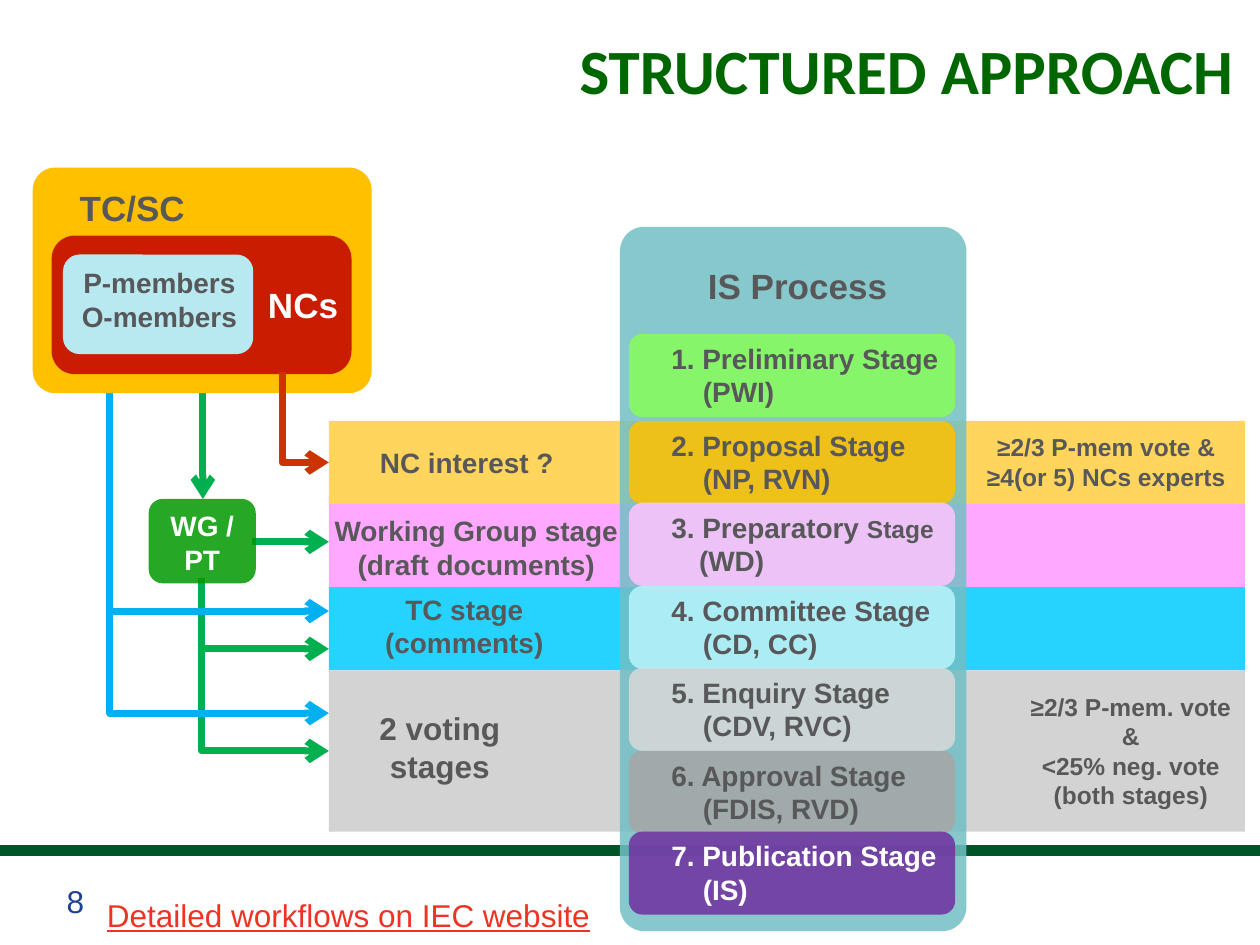
from lxml import etree
from pptx import Presentation
from pptx.dml.color import RGBColor
from pptx.enum.shapes import MSO_CONNECTOR, MSO_SHAPE
from pptx.enum.text import MSO_ANCHOR, PP_ALIGN
from pptx.oxml.ns import qn
from pptx.util import Inches, Pt

RECT, ROUND = MSO_SHAPE.RECTANGLE, MSO_SHAPE.ROUNDED_RECTANGLE
STRAIGHT, ELBOW = MSO_CONNECTOR.STRAIGHT, MSO_CONNECTOR.ELBOW
LEFT, CENTER, RIGHT = PP_ALIGN.LEFT, PP_ALIGN.CENTER, PP_ALIGN.RIGHT
TOP = MSO_ANCHOR.TOP

GREY = RGBColor(0x58, 0x58, 0x5A)
WHITE = RGBColor(0xFF, 0xFF, 0xFF)
NAVY = RGBColor(0x1E, 0x41, 0x91)
RED = RGBColor(0xEE, 0x33, 0x24)
RUST = RGBColor(0xCC, 0x33, 0x00)
BRICK = RGBColor(0xC0, 0x00, 0x00)
DARK = RGBColor(0x00, 0x55, 0x28)
FOREST = RGBColor(0x00, 0x66, 0x00)
LEAF = RGBColor(0x00, 0x99, 0x00)
GREEN = RGBColor(0x00, 0xB0, 0x50)
LIME = RGBColor(0x87, 0xFE, 0x58)
BLUE = RGBColor(0x00, 0xB0, 0xF0)
CYAN = RGBColor(0x00, 0xCC, 0xFF)
ICE = RGBColor(0xB9, 0xF5, 0xFD)
TEAL = RGBColor(0x72, 0xBF, 0xC5)
AMBER = RGBColor(0xFF, 0xC0, 0x00)
SAND = RGBColor(0xFF, 0xD5, 0x5D)
PINK = RGBColor(0xFF, 0x99, 0xFF)
ROSE = RGBColor(0xFF, 0xC5, 0xFF)
SILVER = RGBColor(0xCC, 0xCC, 0xCC)
PALE = RGBColor(0xD9, 0xD9, 0xD9)
STEEL = RGBColor(0xA6, 0xA6, 0xA6)
PURPLE = RGBColor(0x70, 0x30, 0xA0)


class Deck:
    """Holds the style and the current slide."""
    face = "Arial"

    def __init__(self, slide):
        self.slide = slide
        self.shapes = slide.shapes

    def style(self, font, size, color, bold=True, face=None):
        font.name = face or self.face
        font.size = Pt(size)
        font.bold = bold
        font.color.rgb = color

    def title(self, text, x, y, w, h):
        box = self.shapes.title
        box.left, box.top, box.width, box.height = map(Inches, (x, y, w, h))
        frame = box.text_frame
        frame.margin_left = frame.margin_right = 0
        frame.margin_top = frame.margin_bottom = 0
        frame.vertical_anchor = TOP
        frame.text = text
        para = frame.paragraphs[0]
        para.alignment = RIGHT
        para.line_spacing = 0.9
        self.style(para.font, 36, FOREST, face="Calibri")

    def box(self, kind, x, y, w, h, color, alpha=85, adj=None):
        shape = self.shapes.add_shape(kind, *map(Inches, (x, y, w, h)))
        shape.shadow.inherit = False
        shape.fill.solid()
        shape.fill.fore_color.rgb = color
        shape.line.fill.background()
        if adj is not None:
            shape.adjustments[0] = adj
        if alpha < 100:
            tint = shape._element.spPr.find(".//" + qn("a:srgbClr"))
            etree.SubElement(tint, qn("a:alpha"), val=str(alpha * 1000))

    def text(self, lines, x, y, w, h, size, color=GREY, bold=True,
             align=CENTER, inset=(0.1, 0.05), hang=0, line=False):
        """A line is a string, or a list of (text, size) runs."""
        frame = self.shapes.add_textbox(*map(Inches, (x, y, w, h))).text_frame
        frame.word_wrap = True
        frame.margin_left = frame.margin_right = Inches(inset[0])
        frame.margin_top = frame.margin_bottom = Inches(inset[1])
        for i, words in enumerate(lines):
            para = frame.add_paragraph() if i else frame.paragraphs[0]
            para.alignment = align
            if i and hang:
                para._p.get_or_add_pPr().set("marL", str(Inches(hang)))
            self.style(para.font, size, color, bold)
            if line:
                para.font.underline = True
            if isinstance(words, str):
                para.text = words
                continue
            for part, points in words:
                run = para.add_run()
                run.text = part
                self.style(run.font, points, color, bold)

    def line(self, x1, y1, x2, y2, color, width=4, kind=STRAIGHT, head=True):
        """An elbow goes down first, then across."""
        link = self.shapes.add_connector(kind, *map(Inches, (x1, y1, x2, y2)))
        link.line.color.rgb = color
        link.line.width = Pt(width)
        props = link._element.spPr
        etree.SubElement(props, qn("a:effectLst"))
        if head:
            etree.SubElement(props.find(qn("a:ln")), qn("a:tailEnd"), type="arrow")
        if kind == ELBOW:
            geom = props.find(qn("a:prstGeom"))
            for old in list(geom):
                geom.remove(old)
            guides = etree.SubElement(geom, qn("a:avLst"))
            etree.SubElement(guides, qn("a:gd"), name="adj1", fmla="val 0")


def main():
    prs = Presentation()
    prs.slide_width, prs.slide_height = Inches(10), Inches(7.5)
    deck = Deck(prs.slides.add_slide(prs.slide_layouts[5]))
    deck.title("STRUCTURED APPROACH", 3.83, 0.32, 5.96, 1.09)

    # Footer
    deck.line(0, 6.75, 10, 6.75, DARK, width=6, head=False)
    deck.text(["8"], 0.43, 6.95, 0.87, 0.4, 18, NAVY, bold=False, align=LEFT)

    # Bands across the stages
    edge = 2.61
    for top, tall, color, alpha in (
            (5.32, 1.28, SILVER, 85), (4.66, 0.66, CYAN, 85),
            (3.94, 0.72, PINK, 85), (3.34, 0.66, SAND, 100)):
        deck.box(RECT, edge, top, 7.27, tall, color, alpha)

    # Band captions
    deck.text(["2 voting stages"], 2.65, 5.58, 1.68, 0.71, 18)
    deck.text(["TC stage", "(comments)"], 2.61, 4.65, 2.15, 0.64, 16)
    deck.text(["Working Group stage", "(draft documents)"],
              2.64, 4.03, 2.28, 0.64, 16, inset=(0, 0.05))
    deck.text(["NC interest ?"], 2.64, 3.49, 2.13, 0.37, 16)

    # Voting rules
    deck.text(["≥2/3 P-mem. vote", "&", "<25% neg. vote", "(both stages)"],
              8.07, 5.49, 1.81, 0.94, 14, inset=(0, 0))
    deck.text(["≥2/3 P-mem vote &", "≥4(or 5) NCs experts"],
              7.67, 3.43, 2.22, 0.47, 14, inset=(0, 0))

    # Arrows into the bands
    for x, start, end, color in (
            (1.6, 5.15, 5.96, GREEN), (0.87, 4.85, 5.66, BLUE),
            (1.6, 4.59, 5.15, GREEN), (0.87, 3.12, 4.85, BLUE)):
        deck.line(x, start, edge, end, color, kind=ELBOW)

    # Working group
    deck.line(2, 4.3, edge, 4.3, GREEN)
    deck.box(ROUND, 1.18, 3.96, 0.85, 0.67, LEAF)
    deck.text(["WG / PT"], 1.21, 3.99, 0.79, 0.64, 16, WHITE)
    deck.line(1.61, 3.12, 1.61, 3.96, GREEN)

    # Process column
    deck.box(ROUND, 4.92, 1.8, 2.75, 5.59, TEAL, adj=0.07)
    deck.text(["IS Process"], 4.99, 2.05, 2.68, 0.44, 20)
    third = [("3. Preparatory ", 16), ("Stage", 14)]
    for top, name, code, color, ink, hang in (
            (2.65, "1. Preliminary Stage", "(PWI)", LIME, GREY, 0.25),
            (3.34, "2. Proposal Stage", "(NP, RVN)", AMBER, GREY, 0.25),
            (3.99, third, "(WD)", ROSE, GREY, 0.22),
            (4.65, "4. Committee Stage", "(CD, CC)", ICE, GREY, 0.25),
            (5.3, "5. Enquiry Stage", "(CDV, RVC)", PALE, GREY, 0.25),
            (5.96, "6. Approval Stage", "(FDIS, RVD)", STEEL, GREY, 0.25),
            (6.6, "7. Publication Stage", "(IS)", PURPLE, WHITE, 0.25)):
        deck.box(ROUND, 4.99, top, 2.59, 0.66, color)
        deck.text([name, code], 5.23, top + 0.01, 2.35, 0.64, 16, ink,
                  align=LEFT, hang=hang)

    # Committee and its members
    deck.box(ROUND, 0.26, 1.33, 2.69, 1.79, AMBER, 100, adj=0.1)
    deck.text(["TC/SC"], 0.5, 1.43, 1.1, 0.44, 20)
    deck.box(ROUND, 0.41, 1.87, 2.38, 1.1, BRICK)
    deck.text(["NCs"], 2.01, 2.2, 0.79, 0.44, 20, WHITE)
    deck.box(ROUND, 0.5, 2.02, 1.51, 0.79, ICE, 95)
    deck.text(["P-members", "O-members"], 0.52, 2.06, 1.49, 0.64, 16)
    deck.line(2.24, 2.95, edge, 3.67, RUST, kind=ELBOW)

    # Workflow note
    deck.text(["Detailed workflows on IEC website"], 0.75, 7.06, 4.17, 0.4, 18,
              RED, bold=False, align=LEFT, line=True)

    prs.save("out.pptx")


if __name__ == "__main__":
    main()
